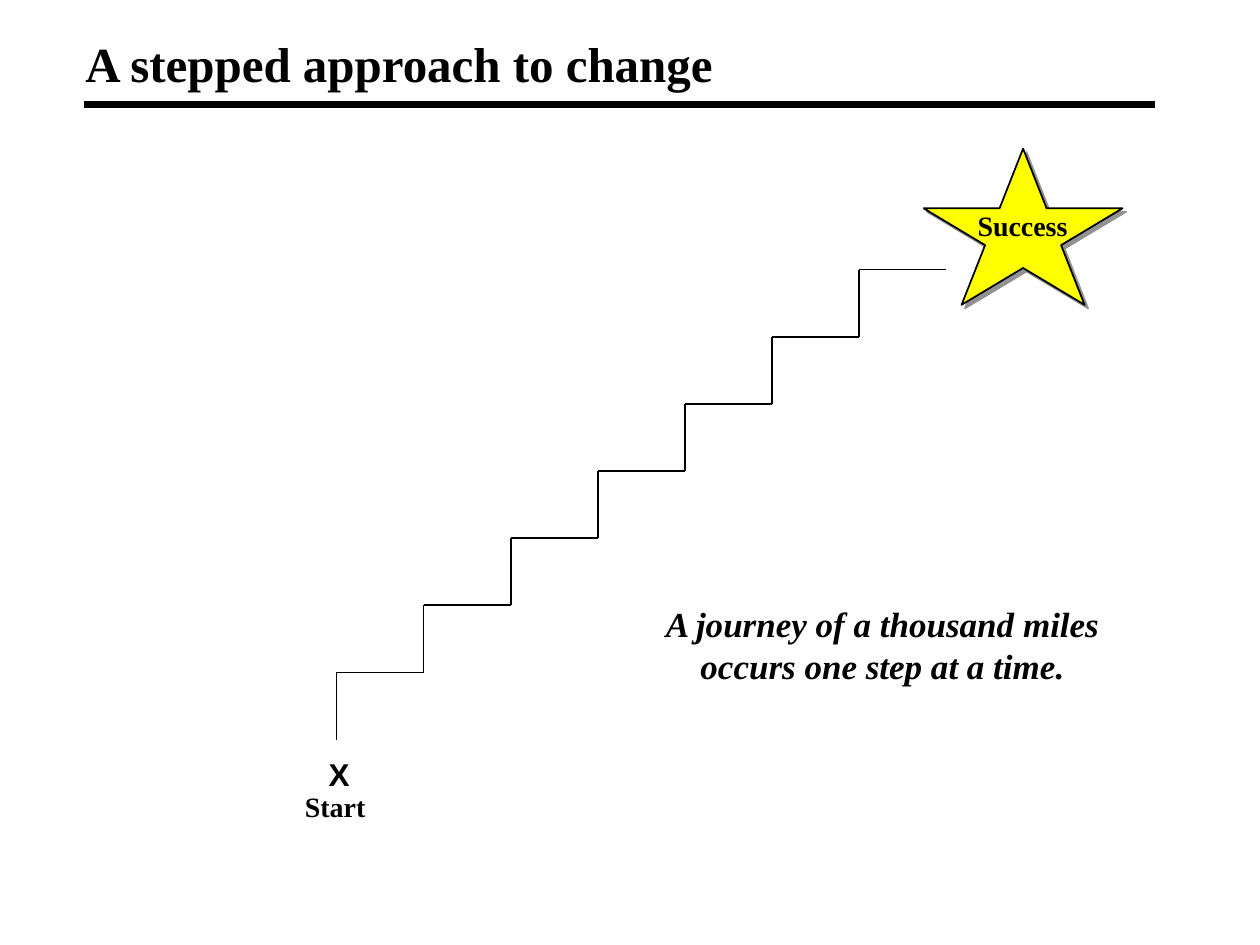
from lxml.etree import SubElement
from pptx import Presentation
from pptx.dml.color import RGBColor
from pptx.enum.shapes import MSO_CONNECTOR, MSO_SHAPE
from pptx.enum.text import MSO_ANCHOR, PP_ALIGN
from pptx.oxml.ns import qn
from pptx.util import Inches, Pt

COLORS = {"ink": "000000", "star": "FFFF00", "shadow": "919191"}
SERIF = "Times New Roman"


def rgb(name):
    return RGBColor.from_string(COLORS[name])


def add_line(slide, x1, y1, x2, y2, width=1):
    line = slide.shapes.add_connector(
        MSO_CONNECTOR.STRAIGHT, Inches(x1), Inches(y1), Inches(x2), Inches(y2))
    line.line.color.rgb = rgb("ink")
    line.line.width = Pt(width)
    SubElement(line._element.spPr, qn("a:effectLst"))


def add_label(slide, text, left, top, width, height, size, align=PP_ALIGN.CENTER,
              anchor=MSO_ANCHOR.TOP, wrap=True, **font_format):
    frame = slide.shapes.add_textbox(
        Inches(left), Inches(top), Inches(width), Inches(height)).text_frame
    frame.word_wrap = wrap
    frame.vertical_anchor = anchor
    paragraph = frame.paragraphs[0]
    paragraph.alignment = align
    run = paragraph.add_run()
    run.text = text
    values = {"name": SERIF, "size": Pt(size), "bold": True, **font_format}
    for attribute, value in values.items():
        setattr(run.font, attribute, value)
    run.font.color.rgb = rgb("ink")


def add_heading(slide, left, top, width, height):
    add_label(slide, "A stepped approach to change", left, top, width, height, 28,
              align=PP_ALIGN.LEFT, anchor=MSO_ANCHOR.MIDDLE)
    rule_y = top + height + 0.08
    add_line(slide, left + 0.09, rule_y, left + width + 0.01, rule_y, width=3.75)


def add_staircase(slide, left, top, width, height, steps=7):
    """Climb from the bottom left to the top right, a riser then a tread."""
    tread, riser = width / steps, height / steps
    for step in range(steps):
        x = left + step * tread
        y = top + height - step * riser
        add_line(slide, x, y, x, y - riser)
        add_line(slide, x, y - riser, x + tread, y - riser)


def add_start(slide, left, top):
    add_label(slide, "Start", left, top + 0.28, 0.68, 0.37, 16, wrap=False)
    add_label(slide, "X", left + 0.19, top, 0.29, 0.4, 18, name="Arial")


def add_success_star(slide, left, top, width, height):
    star = slide.shapes.add_shape(
        MSO_SHAPE.STAR_5_POINT, Inches(left), Inches(top), Inches(width), Inches(height))
    star.fill.solid()
    star.fill.fore_color.rgb = rgb("star")
    star.line.color.rgb = rgb("ink")
    star.line.width = Pt(1)
    star.shadow.inherit = False
    effects = star._element.spPr.find(qn("a:effectLst"))
    shadow = SubElement(effects, qn("a:outerShdw"), dist=str(Pt(2.8)),
                        dir=str(45 * 60000), algn="ctr", rotWithShape="0")
    SubElement(shadow, qn("a:srgbClr"), val=COLORS["shadow"])
    add_label(slide, "Success", left + 0.33, top + 0.43, 0.92, 0.37, 16,
              align=PP_ALIGN.LEFT, wrap=False)


def main():
    deck = Presentation()
    deck.slide_width, deck.slide_height = Inches(10), Inches(7.5)
    slide = deck.slides.add_slide(deck.slide_layouts[6])
    add_heading(slide, 0.58, 0.25, 8.58, 0.5)
    add_staircase(slide, 2.67, 2.14, 4.84, 3.73)
    add_start(slide, 2.32, 5.94)
    add_label(slide, "A journey of a thousand miles occurs one step at a time.",
              5.17, 4.73, 3.67, 0.77, 20, italic=True)
    add_success_star(slide, 7.33, 1.18, 1.58, 1.24)
    deck.save("out.pptx")


if __name__ == "__main__":
    main()
